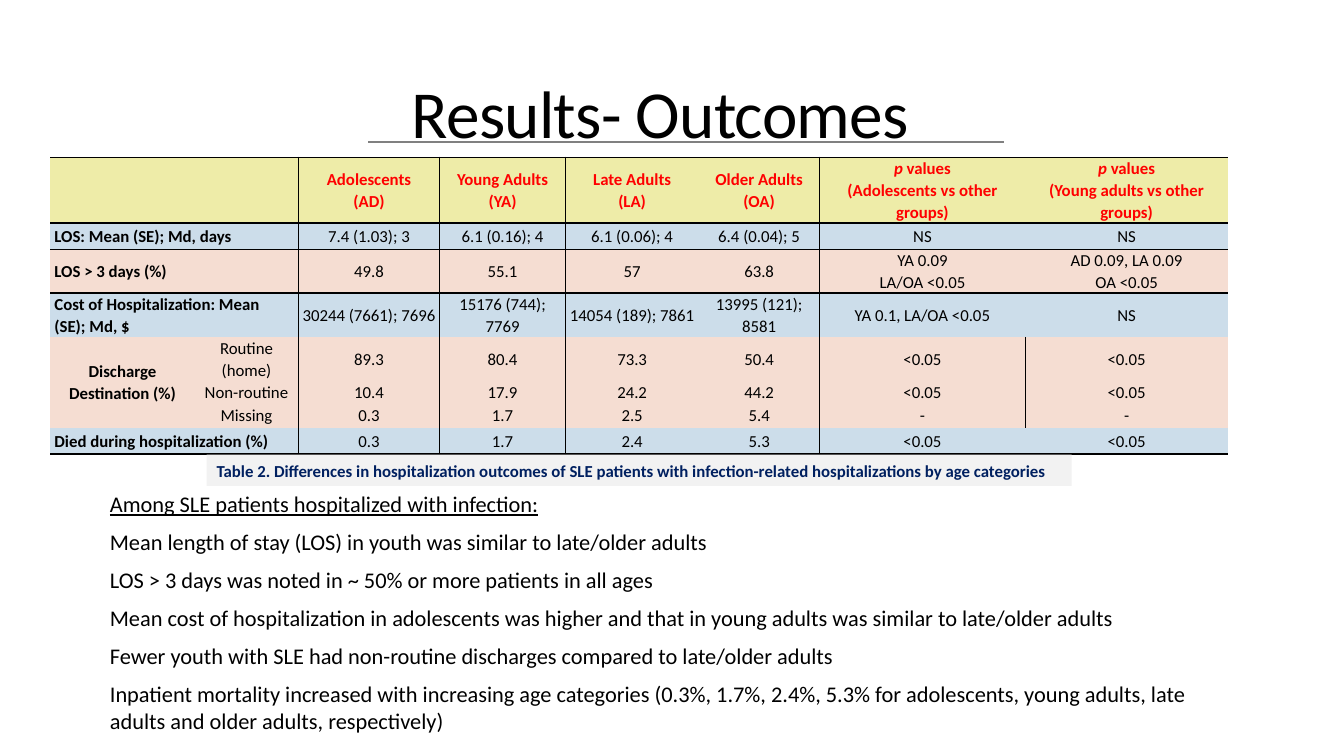
from dataclasses import dataclass

from lxml.etree import SubElement
from pptx import Presentation
from pptx.dml.color import RGBColor
from pptx.enum.shapes import MSO_CONNECTOR, MSO_SHAPE
from pptx.enum.text import MSO_ANCHOR, MSO_AUTO_SIZE, PP_ALIGN
from pptx.oxml.ns import qn
from pptx.util import Pt

PX = 9144


@dataclass(frozen=True)
class Theme:
    """Colours, type sizes and font of the slide."""
    font: str = "Calibri"
    text: str = "000000"
    heading: str = "FF0000"
    caption: str = "002060"
    caption_fill: str = "F2F2F2"
    rule: str = "808080"
    head_fill: str = "EEECA8"
    blue: str = "CCDDEA"
    peach: str = "F5DDD2"
    title_size: int = 48
    body_size: int = 16
    small_size: int = 12


T = Theme()
NO_GRID_STYLE = "{2D5ABB26-0587-4C30-8999-92F81FD0307C}"
COLS = [143, 103, 140, 125, 132, 120, 204, 201]
ROWS = [56, 26, 26, 26, 12, 20, 25, 26]
ROW_FILLS = [T.head_fill, T.blue, T.peach, T.blue, T.peach, T.peach, T.peach, T.blue]
RULED_BELOW = {-1, 0, 1, 7}
RULED_AFTER = {1, 2, 5}
DISCHARGE_ROWS = {4, 5, 6}
P_COLUMN = 6
MERGES = [(r, 0, r, 1) for r in (0, 1, 2, 3, 7)] + [(4, 0, 6, 0)]
OUTCOMES = [
    ["", "", "Adolescents\n(AD)", "Young Adults\n(YA)", "Late Adults\n(LA)", "Older Adults\n(OA)",
     "p values\n(Adolescents vs other groups)", "p values\n(Young adults vs other groups)"],
    ["LOS: Mean (SE); Md, days", "", "7.4 (1.03); 3", "6.1 (0.16); 4", "6.1 (0.06); 4",
     "6.4 (0.04); 5", "NS", "NS"],
    ["LOS > 3 days (%)", "", "49.8", "55.1", "57", "63.8",
     "YA 0.09\nLA/OA <0.05", "AD 0.09, LA 0.09\nOA <0.05"],
    ["Cost of Hospitalization: Mean (SE); Md, $", "", "30244 (7661); 7696", "15176 (744); 7769",
     "14054 (189); 7861", "13995 (121); 8581", "YA 0.1, LA/OA <0.05", "NS"],
    ["Discharge Destination (%)", "Routine (home)", "89.3", "80.4", "73.3", "50.4", "<0.05", "<0.05"],
    ["", "Non-routine", "10.4", "17.9", "24.2", "44.2", "<0.05", "<0.05"],
    ["", "Missing", "0.3", "1.7", "2.5", "5.4", "-", "-"],
    ["Died during hospitalization (%)", "", "0.3", "1.7", "2.4", "5.3", "<0.05", "<0.05"],
]
CAPTION = ("Table 2. Differences in hospitalization outcomes of SLE patients "
           "with infection-related hospitalizations by age categories")
FINDINGS = [
    "Among SLE patients hospitalized with infection:",
    "Mean length of stay (LOS) in youth was similar to late/older adults",
    "LOS > 3 days was noted in ~ 50% or more patients in all ages",
    "Mean cost of hospitalization in adolescents was higher and that in young adults "
    "was similar to late/older adults",
    "Fewer youth with SLE had non-routine discharges compared to late/older adults",
    "Inpatient mortality increased with increasing age categories (0.3%, 1.7%, 2.4%, 5.3% "
    "for adolescents, young adults, late adults and older adults, respectively)",
]


def apply(obj, **formats):
    """Set each format value on the object."""
    for name, value in formats.items():
        setattr(obj, name, value)


def place(sp, left, top, width, height):
    """Move and size a shape, in px."""
    apply(sp, left=left * PX, top=top * PX, width=width * PX, height=height * PX)


def add_run(p, text, size, color=T.text, **formats):
    """Add a formatted run to a paragraph."""
    r = p.add_run()
    r.text = text
    apply(r.font, name=T.font, size=Pt(size), **formats)
    r.font.color.rgb = RGBColor.from_string(color)
    return r


def paint(fill, color):
    """Give a fill one solid colour."""
    fill.solid()
    fill.fore_color.rgb = RGBColor.from_string(color)


def add_title(s):
    """Write the slide title."""
    sp = s.shapes.title
    place(sp, 105, 46, 1100, 110)
    apply(sp.text_frame, vertical_anchor=MSO_ANCHOR.BOTTOM, auto_size=MSO_AUTO_SIZE.NONE)
    p = sp.text_frame.paragraphs[0]
    apply(p, alignment=PP_ALIGN.CENTER, line_spacing=0.85)
    r = add_run(p, "Results- Outcomes", T.title_size)
    r.font._element.set("spc", "-50")


def add_rule(s):
    """Draw the thin line below the title."""
    sp = s.shapes.add_connector(MSO_CONNECTOR.STRAIGHT, 365 * PX, 141 * PX, 996 * PX, 141 * PX)
    sp.line.color.rgb = RGBColor.from_string(T.rule)
    sp.line.width = Pt(1)
    SubElement(sp._element.spPr, qn("a:effectLst"))


def add_borders(cell, row, col):
    """Draw the ruled edges of one cell."""
    right, bottom = col + cell.span_width - 1, row + cell.span_height - 1
    after = RULED_AFTER | ({P_COLUMN} if row in DISCHARGE_ROWS else set())
    edges = {"L": col - 1 in after, "R": right in after,
             "T": row - 1 in RULED_BELOW, "B": bottom in RULED_BELOW}
    tcPr = cell._tc.get_or_add_tcPr()
    for side, ruled in edges.items():
        if ruled:
            ln = SubElement(tcPr, qn(f"a:ln{side}"), w=str(Pt(1)))
            SubElement(SubElement(ln, qn("a:solidFill")), qn("a:srgbClr"), val=T.text)


def fill_cell(cell, row, col, text):
    """Format one table cell and write its lines."""
    add_borders(cell, row, col)
    paint(cell.fill, ROW_FILLS[row])
    apply(cell, vertical_anchor=MSO_ANCHOR.MIDDLE, margin_left=4 * PX, margin_right=4 * PX,
          margin_top=0, margin_bottom=0)
    if not text:
        return
    color = T.heading if row == 0 else T.text
    bold = row == 0 or col == 0
    left = col == 0 and row not in DISCHARGE_ROWS
    tf = cell.text_frame
    for i, line in enumerate(text.split("\n")):
        p = tf.add_paragraph() if i else tf.paragraphs[0]
        apply(p, alignment=PP_ALIGN.LEFT if left else PP_ALIGN.CENTER, line_spacing=1.07)
        if line == "p values":
            add_run(p, "p", T.small_size, color, bold=bold, italic=True)
            line = " values"
        add_run(p, line, T.small_size, color, bold=bold)


def add_outcomes_table(s):
    """Build the table of outcomes by age group."""
    gf = s.shapes.add_table(len(ROWS), len(COLS), 50 * PX, 156 * PX, sum(COLS) * PX, sum(ROWS) * PX)
    table = gf.table
    apply(table, first_row=False, horz_banding=False)
    table._tbl.tblPr.find(qn("a:tableStyleId")).text = NO_GRID_STYLE
    for column, width in zip(table.columns, COLS):
        column.width = width * PX
    for row, height in zip(table.rows, ROWS):
        row.height = height * PX
    for top, left, bottom, right in MERGES:
        table.cell(top, left).merge(table.cell(bottom, right))
    for r, texts in enumerate(OUTCOMES):
        for c, text in enumerate(texts):
            fill_cell(table.cell(r, c), r, c, text)


def add_caption(s):
    """Add the shaded table caption."""
    sp = s.shapes.add_shape(MSO_SHAPE.RECTANGLE, 205 * PX, 451 * PX, 858 * PX, 31 * PX)
    sp.shadow.inherit = False
    paint(sp.fill, T.caption_fill)
    sp.line.fill.background()
    apply(sp.text_frame, word_wrap=True, vertical_anchor=MSO_ANCHOR.TOP)
    p = sp.text_frame.paragraphs[0]
    apply(p, alignment=PP_ALIGN.LEFT, line_spacing=1.07, space_after=Pt(8))
    add_run(p, CAPTION, T.small_size, T.caption, bold=True)


def add_findings(s):
    """Write the findings in the body placeholder."""
    sp = s.placeholders[1]
    place(sp, 67, 481, 1175, 255)
    tf = sp.text_frame
    apply(tf, auto_size=MSO_AUTO_SIZE.NONE, vertical_anchor=MSO_ANCHOR.TOP)
    for i, text in enumerate(FINDINGS):
        p = tf.add_paragraph() if i else tf.paragraphs[0]
        apply(p, level=1, space_before=Pt(0), space_after=Pt(8))
        pPr = p._p.get_or_add_pPr()
        pPr.set("marL", str(32 * PX))
        pPr.set("indent", "0")
        SubElement(pPr, qn("a:buNone"))
        add_run(p, text, T.body_size, underline=i == 0)


def main():
    """Build and save the slide."""
    prs = Presentation()
    apply(prs, slide_width=1333 * PX, slide_height=750 * PX)
    s = prs.slides.add_slide(prs.slide_layouts[1])
    add_title(s)
    add_outcomes_table(s)
    add_caption(s)
    add_findings(s)
    add_rule(s)
    prs.save("out.pptx")


if __name__ == "__main__":
    main()
